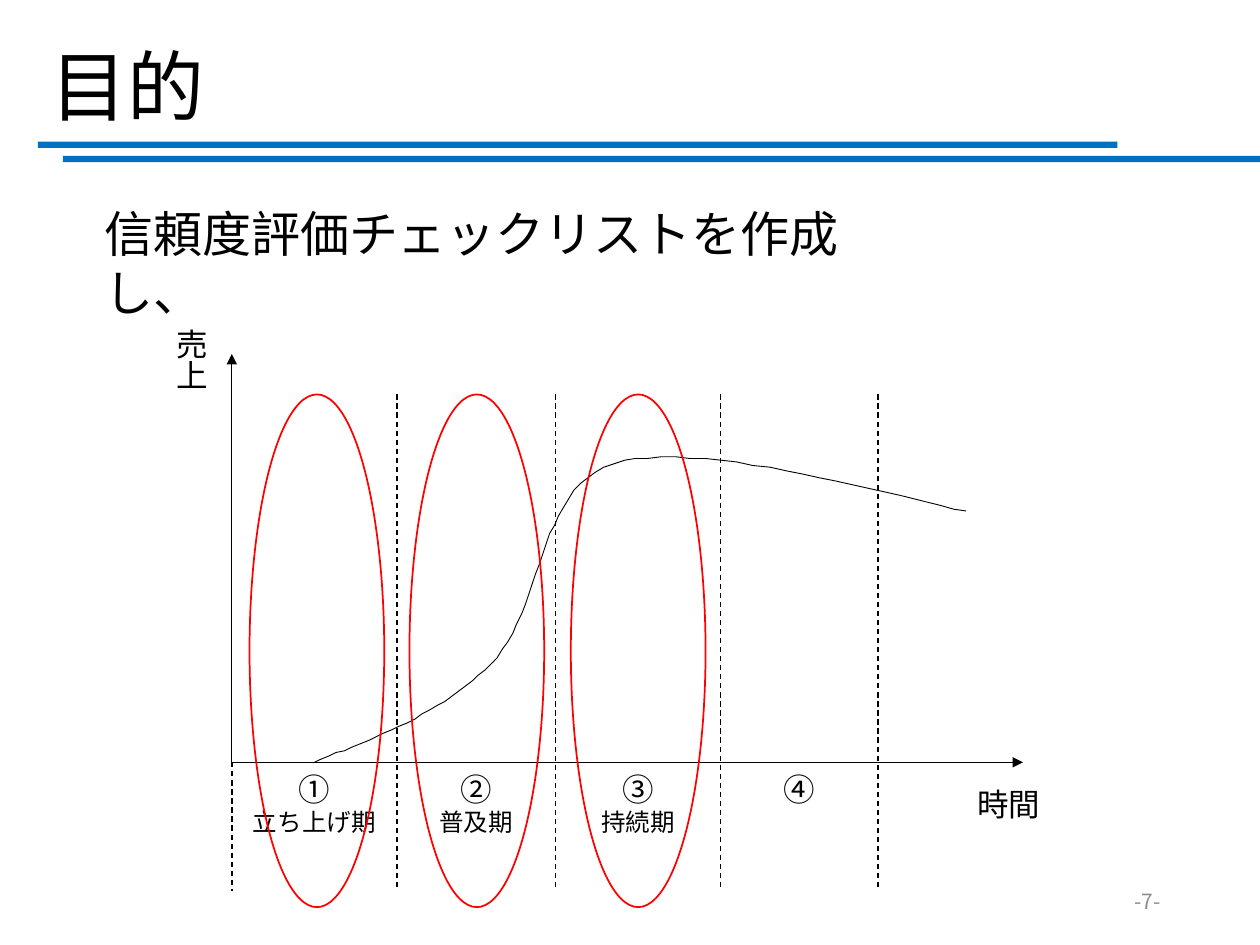
"""Draw the purpose slide with its sales life-cycle curve."""
from dataclasses import dataclass

from lxml import etree
from pptx import Presentation
from pptx import util as u
from pptx.dml.color import RGBColor
from pptx.enum import dml, shapes, text
from pptx.oxml import ns

Pt = u.Pt
LEFT, MID, RIGHT = text.PP_ALIGN.LEFT, text.PP_ALIGN.CENTER, text.PP_ALIGN.RIGHT


@dataclass(frozen=True)
class Theme:
    font: str = "Noto Sans CJK JP"
    ink: str = "000000"
    bar: str = "0070C0"
    ring: str = "FF0000"
    gray: str = "8C8C8C"
    title: int = 44
    body: int = 28
    label: int = 18
    note: int = 14
    foot: int = 12


class Pen:
    def __init__(self, slide, theme):
        self.slide, self.theme = slide, theme
        self.items = slide.shapes

    def stroke(self, line, color, width):
        line.color.rgb = RGBColor.from_string(color)
        line.width = Pt(width)

    def shape(self, kind, box, fill=None, edge=None):
        item = self.items.add_shape(kind, *map(Pt, box))
        item.shadow.inherit = False
        if fill:
            item.fill.solid()
            item.fill.fore_color.rgb = RGBColor.from_string(fill)
        else:
            item.fill.background()
        if edge:
            self.stroke(item.line, edge, 1)
        else:
            item.line.fill.background()

    def line(self, start, end, width=0.5, dash=False, arrow=False):
        item = self.items.add_connector(
            shapes.MSO_CONNECTOR.STRAIGHT, *map(Pt, start + end))
        self.stroke(item.line, self.theme.ink, width)
        if dash:
            item.line.dash_style = dml.MSO_LINE.DASH
        props = item.element.spPr
        if arrow:
            edge = props.find(ns.qn("a:ln"))
            etree.SubElement(edge, ns.qn("a:tailEnd"), type="triangle")
        etree.SubElement(props, ns.qn("a:effectLst"))

    def curve(self, start, parts, steps=24):
        dots, last = [], start
        for part in parts:
            knots = (last,) + part
            for step in range(1, steps + 1):
                t = step / steps
                mix = ((1 - t) ** 3, 3 * t * (1 - t) ** 2,
                       3 * t * t * (1 - t), t ** 3)
                dots.append(tuple(sum(m * k[axis] for m, k in zip(mix, knots))
                                  for axis in (0, 1)))
            last = part[-1]
        path = self.items.build_freeform(*start, scale=Pt(1))
        path.add_line_segments(dots, close=False)
        item = path.convert_to_shape()
        item.shadow.inherit = False
        item.fill.background()
        self.stroke(item.line, self.theme.ink, 0.5)

    def text(self, box, rows, align=LEFT, color=None, middle=False,
             upright=False, space=None):
        item = self.items.add_textbox(*map(Pt, box))
        frame = item.text_frame
        frame.word_wrap = True
        if middle:
            frame.vertical_anchor = text.MSO_ANCHOR.MIDDLE
        else:
            frame.auto_size = text.MSO_AUTO_SIZE.SHAPE_TO_FIT_TEXT
        if upright:
            item.element.txBody.find(ns.qn("a:bodyPr")).set("vert", "eaVert")
        for spot, (words, size) in enumerate(rows):
            para = frame.add_paragraph() if spot else frame.paragraphs[0]
            para.text = words
            para.alignment = align
            para.line_spacing = space
            para.font.size = Pt(size)
            para.font.name = self.theme.font
            para.font.color.rgb = RGBColor.from_string(color or self.theme.ink)
        for props in item.element.iter(ns.qn("a:defRPr")):
            etree.SubElement(props, ns.qn("a:ea"), typeface=self.theme.font)


def main():
    deck = Presentation()
    deck.slide_width, deck.slide_height = Pt(720), Pt(540)
    look = Theme()
    pen = Pen(deck.slides.add_slide(deck.slide_layouts[6]), look)

    for left, top, width in ((21.6, 80.9, 617), (36, 89.1, 684)):
        pen.shape(shapes.MSO_SHAPE.RECTANGLE, (left, top, width, 3.6), fill=look.bar)
    pen.text((21.6, -0.7, 620.6, 104.4), [("目的", look.title)],
             middle=True, space=0.9)
    pen.text((508.3, 500.4, 162, 28.8), [("-7-", look.foot)],
             align=RIGHT, color=look.gray, middle=True)

    base, top, foot = 435.6, 225.4, 509
    edges = (132.5, 226.8, 317.5, 411.8, 501.8)
    zero = (edges[0], base)
    pen.curve((178.6, base), (
        ((215.3, 422), (252, 407.5), (280.8, 379.4)),
        ((309.6, 350.6), (306, 279.4), (350.6, 265)),
        ((396, 250.6), (501.1, 280.8), (551.8, 292.3))))
    pen.line(zero, (edges[0], 202.3), arrow=True)
    pen.line(zero, (584.6, base), arrow=True)
    for edge in edges:
        start = base if edge == edges[0] else top
        pen.line((edge, start), (edge, foot), width=0.75, dash=True)

    pen.text((84.2, 180.7, 39.6, 121.7), [("売上", look.label)], upright=True)
    pen.text((551.5, 445, 83.5, 36.7), [("時間", look.label)])
    stages = (("①", "立ち上げ期"), ("②", "普及期"), ("③", "持続期"), ("④",))
    for left, right, words in zip(edges, edges[1:], stages):
        rows = list(zip(words, (look.label, look.note)))
        pen.text((left, 436.3, right - left, 55.4 if rows[1:] else 36.7),
                 rows, align=MID)
    for left in (142.6, 234, 326.2):
        pen.shape(shapes.MSO_SHAPE.OVAL, (left, top, 77, 293), edge=look.ring)
    pen.text((52.6, 113, 451.4, 41), [("信頼度評価チェックリストを作成し、", look.body)])

    deck.save("out.pptx")


if __name__ == "__main__":
    main()
